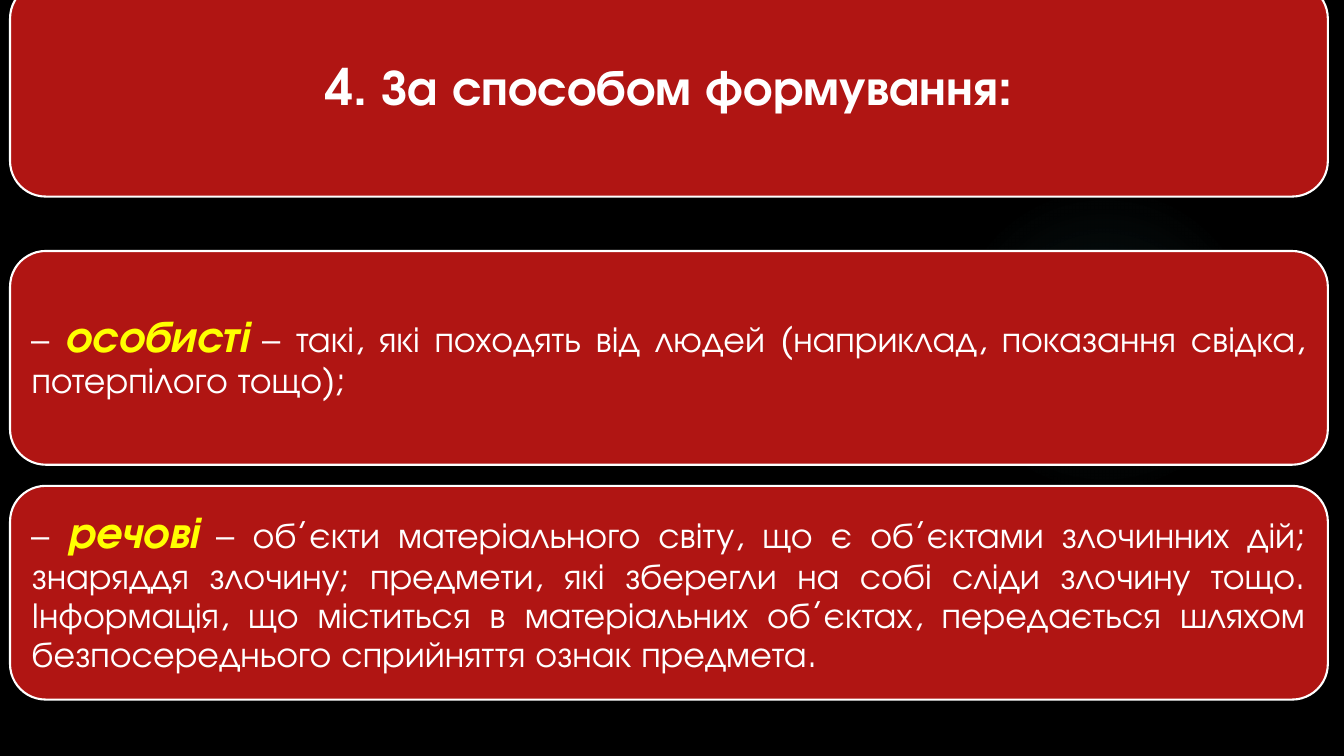
from dataclasses import dataclass

from lxml import etree
from pptx import Presentation
from pptx import util as u
from pptx.dml import color
from pptx.enum import shapes, text
from pptx.oxml import ns


@dataclass(frozen=True)
class Theme:
    font: str = "TeX Gyre Adventor"
    back: str = "000000"
    card: str = "B01513"
    ink: str = "FFFFFF"
    key: str = "FFFF00"
    glow: str = "50B9C1"
    head: int = 36
    term: int = 32
    body: int = 26


THEME = Theme()
LEFT, WIDTH, HEIGHT = 0.1, 13.07, 2.12
TOPS = (-0.17, 2.49, 4.82)
ITEMS = (
    ("особисті", "такі, які походять від людей (наприклад, показання свідка, "
     "потерпілого тощо);"),
    ("речові", "об’єкти матеріального світу, що є об’єктами злочинних дій; "
     "знаряддя злочину; предмети, які зберегли на собі сліди злочину тощо. "
     "Інформація, що міститься в матеріальних об’єктах, передається шляхом "
     "безпосереднього сприйняття ознак предмета."),
)


def rgb(code):
    return color.RGBColor.from_string(code)


def add_run(para, words, size=THEME.body, tint=THEME.ink, bold=False, slant=False):
    run = para.add_run()
    run.text = words
    font = run.font
    font.name, font.size = THEME.font, u.Pt(size)
    font.bold, font.italic = bold, slant
    font.color.rgb = rgb(tint)


def set_frame(shape, inset, align):
    frame = shape.text_frame
    frame.word_wrap = True
    frame.auto_size = text.MSO_AUTO_SIZE.NONE
    frame.vertical_anchor = text.MSO_ANCHOR.MIDDLE
    frame.margin_left = frame.margin_right = u.Inches(inset)
    frame.margin_top = frame.margin_bottom = u.Inches(inset)
    para = frame.paragraphs[0]
    para.alignment = align
    para.line_spacing = 0.9
    para.space_before = u.Pt(0)
    return para


def add_glow(slide):
    side = u.Inches(3.08)
    glow = slide.shapes.add_shape(
        shapes.MSO_SHAPE.OVAL, u.Inches(9.41), u.Inches(1.83), side, side)
    glow.shadow.inherit = False
    glow.line.fill.background()
    stops = "".join(
        f'<a:gs pos="{pos * 1000}"><a:srgbClr val="{THEME.glow}">'
        f'<a:alpha val="{alpha * 1000}"/></a:srgbClr></a:gs>'
        for pos, alpha in ((0, 7), (36, 6), (69, 0)))
    fill = etree.fromstring(
        f'<a:gradFill {ns.nsdecls("a")}><a:gsLst>{stops}</a:gsLst>'
        '<a:path path="circle"><a:fillToRect l="50000" t="50000" '
        'r="50000" b="50000"/></a:path></a:gradFill>')
    glow._element.spPr.find(ns.qn("a:prstGeom")).addnext(fill)


def add_card(slide, top):
    card = slide.shapes.add_shape(
        shapes.MSO_SHAPE.ROUNDED_RECTANGLE, u.Inches(LEFT), u.Inches(top),
        u.Inches(WIDTH), u.Inches(HEIGHT))
    card.shadow.inherit = False
    card.fill.solid()
    card.fill.fore_color.rgb = rgb(THEME.card)
    card.line.color.rgb = rgb(THEME.ink)
    card.line.width = u.Pt(1.5)
    return card


def add_title(slide, words, card):
    title = slide.shapes.title
    title.left, title.top = card.left, card.top
    title.width, title.height = card.width, card.height
    card._element.addnext(title._element)
    para = set_frame(title, 0.15, text.PP_ALIGN.CENTER)
    add_run(para, words, size=THEME.head, bold=True)


def add_item(slide, top, term, words):
    para = set_frame(add_card(slide, top), 0.11, text.PP_ALIGN.JUSTIFY)
    add_run(para, "– ")
    add_run(para, term, size=THEME.term, tint=THEME.key, bold=True, slant=True)
    add_run(para, f" – {words}")


def main():
    deck = Presentation()
    deck.slide_width, deck.slide_height = u.Inches(13.33), u.Inches(7.5)
    slide = deck.slides.add_slide(deck.slide_layouts[5])
    slide.background.fill.solid()
    slide.background.fill.fore_color.rgb = rgb(THEME.back)
    add_glow(slide)
    add_title(slide, "4. За способом формування:", add_card(slide, TOPS[0]))
    for top, (term, words) in zip(TOPS[1:], ITEMS):
        add_item(slide, top, term, words)
    deck.save("out.pptx")


if __name__ == "__main__":
    main()
